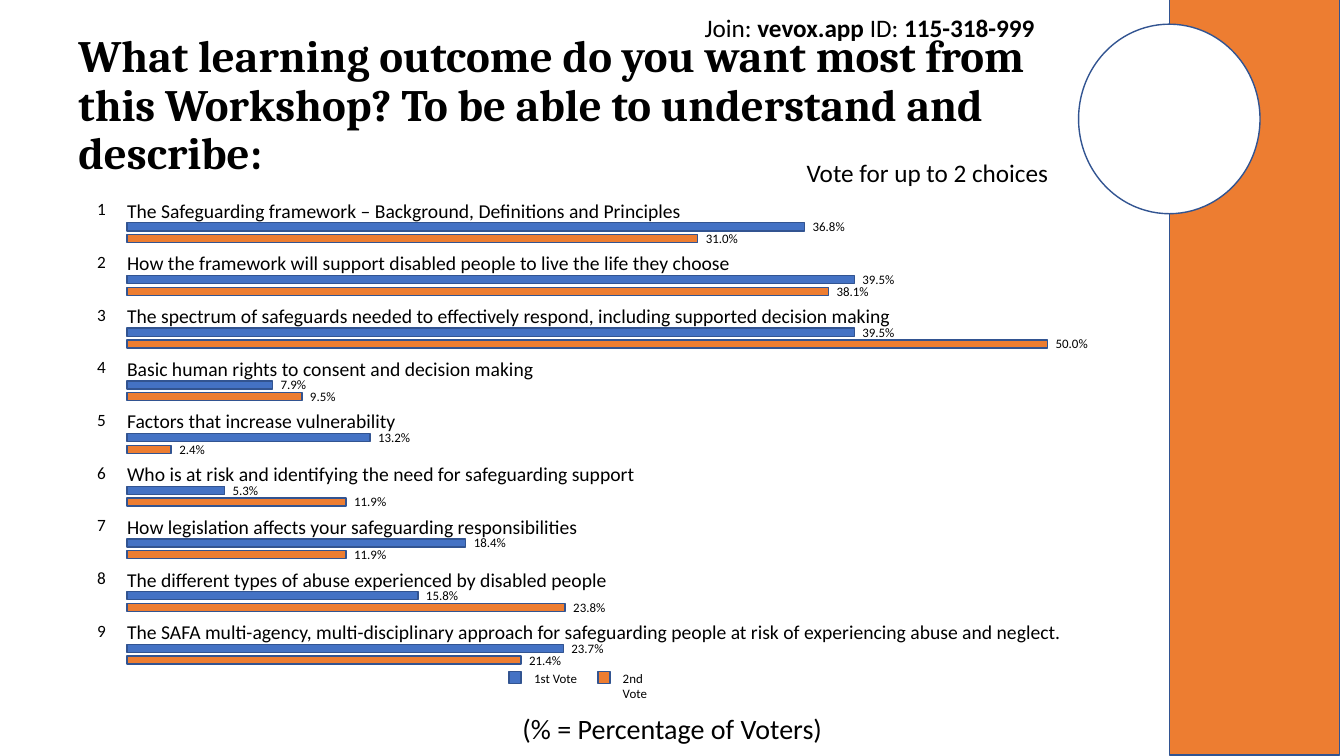
from pptx import Presentation
from pptx.dml.color import RGBColor
from pptx.enum.shapes import MSO_SHAPE
from pptx.enum.text import MSO_ANCHOR, MSO_AUTO_SIZE, PP_ALIGN
from pptx.util import Inches, Pt

BLACK = RGBColor(0x00, 0x00, 0x00)
WHITE = RGBColor(0xFF, 0xFF, 0xFF)
BLUE = RGBColor(0x44, 0x72, 0xC4)
ORANGE = RGBColor(0xED, 0x7D, 0x31)
NAVY = RGBColor(0x32, 0x54, 0x91)

deck = Presentation()
deck.slide_width, deck.slide_height = Inches(13.33), Inches(7.5)
slide = deck.slides.add_slide(deck.slide_layouts[6])
COL, ROW = deck.slide_width / 100, deck.slide_height / 100


def write(home, place, runs, size, align=PP_ALIGN.LEFT, pad=(0.1, 0.05, 0.1, 0.05),
          wrap=True, font="Calibri", grow=True):
    """Add a text box; place is in percent of the slide, runs are (text, bold) pairs."""
    x, y, w, h = place
    box = home.shapes if home is slide else home.shapes
    box = box.add_textbox(int(x * COL), int(y * ROW), int(w * COL), int(h * ROW))
    frame = box.text_frame
    sides = ("margin_left", "margin_top", "margin_right", "margin_bottom")
    look = dict(zip(sides, map(Inches, pad)), word_wrap=wrap)
    look["auto_size"] = MSO_AUTO_SIZE.SHAPE_TO_FIT_TEXT if grow else MSO_AUTO_SIZE.NONE
    for name, value in look.items():
        setattr(frame, name, value)
    line = frame.paragraphs[0]
    line.alignment = align
    for text, bold in runs:
        run = line.add_run()
        run.text = text
        for name, value in {"name": font, "size": Pt(size), "bold": bold}.items():
            setattr(run.font, name, value)
        run.font.color.rgb = BLACK
    return frame


def draw(home, kind, place, fill):
    """Add an outlined shape; place is in percent of the slide."""
    x, y, w, h = place
    shape = home.shapes.add_shape(kind, int(x * COL), int(y * ROW), int(w * COL), int(h * ROW))
    shape.shadow.inherit = False
    shape.fill.solid()
    shape.fill.fore_color.rgb = fill
    shape.line.color.rgb = NAVY
    shape.line.width = Pt(1)


# Headings
title = write(slide, (5.1, 9.87, 76.95, 8.53),
              [("What learning outcome do you want most from this Workshop? "
                "To be able to understand and describe:", True)],
              32, pad=(0.1, 0.1, 0.1, 0.1), font="Cambria", grow=False)
title.vertical_anchor = MSO_ANCHOR.MIDDLE
title.paragraphs[0].line_spacing = 0.9
write(slide, (47.78, 20.13, 42.45, 5.33), [("Vote for up to 2 choices", False)],
      18, PP_ALIGN.CENTER)
write(slide, (15.75, 93.47, 68.55, 5.87), [("(% = Percentage of Voters)", False)],
      20, PP_ALIGN.CENTER, grow=False)

# Poll results: one row per choice, one bar per vote
CHOICES = [
    ("The Safeguarding framework – Background, Definitions and Principles", 36.8, 31.0),
    ("How the framework will support disabled people to live the life they choose", 39.5, 38.1),
    ("The spectrum of safeguards needed to effectively respond, "
     "including supported decision making", 39.5, 50.0),
    ("Basic human rights to consent and decision making", 7.9, 9.5),
    ("Factors that increase vulnerability", 13.2, 2.4),
    ("Who is at risk and identifying the need for safeguarding support", 5.3, 11.9),
    ("How legislation affects your safeguarding responsibilities", 18.4, 11.9),
    ("The different types of abuse experienced by disabled people", 15.8, 23.8),
    ("The SAFA multi-agency, multi-disciplinary approach for safeguarding people "
     "at risk of experiencing abuse and neglect.", 23.7, 21.4),
]
VOTES = [("1st Vote", BLUE), ("2nd Vote", ORANGE)]
LEFT, TOP, PITCH = 9.45, 25.47, 6.97
STEP, UNIT = 1.56, 1.37

poll = slide.shapes.add_group_shape()
for i, (label, *shares) in enumerate(CHOICES):
    top = TOP + i * PITCH
    write(poll, (6.38, top, 3.15, 3.47), [(str(i + 1), False)], 12.3,
          PP_ALIGN.RIGHT, (0.1, 0.06, 0.22, 0), False)
    write(poll, (LEFT, top, 71.33, 4.27), [(label, False)], 14, pad=(0, 0.06, 0, 0.03))
    for j, share in enumerate(shares):
        long, drop = share * UNIT, top + j * STEP
        write(poll, (LEFT + long, drop + 3.47, 3 if share >= 10 else 2.55, 2.13),
              [(f"{share:.1f}%", False)], 9.2, pad=(0.08, 0, 0, 0), wrap=False)
        draw(poll, MSO_SHAPE.RECTANGLE, (LEFT, drop + 4, long, 1.07), VOTES[j][1])

for j, (vote, fill) in enumerate(VOTES):
    left = 37.88 + j * 6.6
    draw(poll, MSO_SHAPE.RECTANGLE, (left, 88.8, 0.9, 1.6), fill)
    write(poll, (left + 1.12, 88.13, 4.5, 3.2), [(vote, False)], 9.2,
          pad=(0.1, 0.04, 0.04, 0.04), wrap=False)

# Side panel and joining details
panel = slide.shapes.add_group_shape()
draw(panel, MSO_SHAPE.RECTANGLE, (87, -0.13, 12.68, 100), ORANGE)
draw(panel, MSO_SHAPE.OVAL, (80.25, 3.2, 13.5, 25.07), WHITE)
write(slide, (51.53, 0.93, 26.33, 5.33),
      [("Join: ", False), ("vevox.app", True), (" ID: ", False), ("115-318-999", True)],
      18, PP_ALIGN.CENTER, wrap=False)

deck.save("out.pptx")
